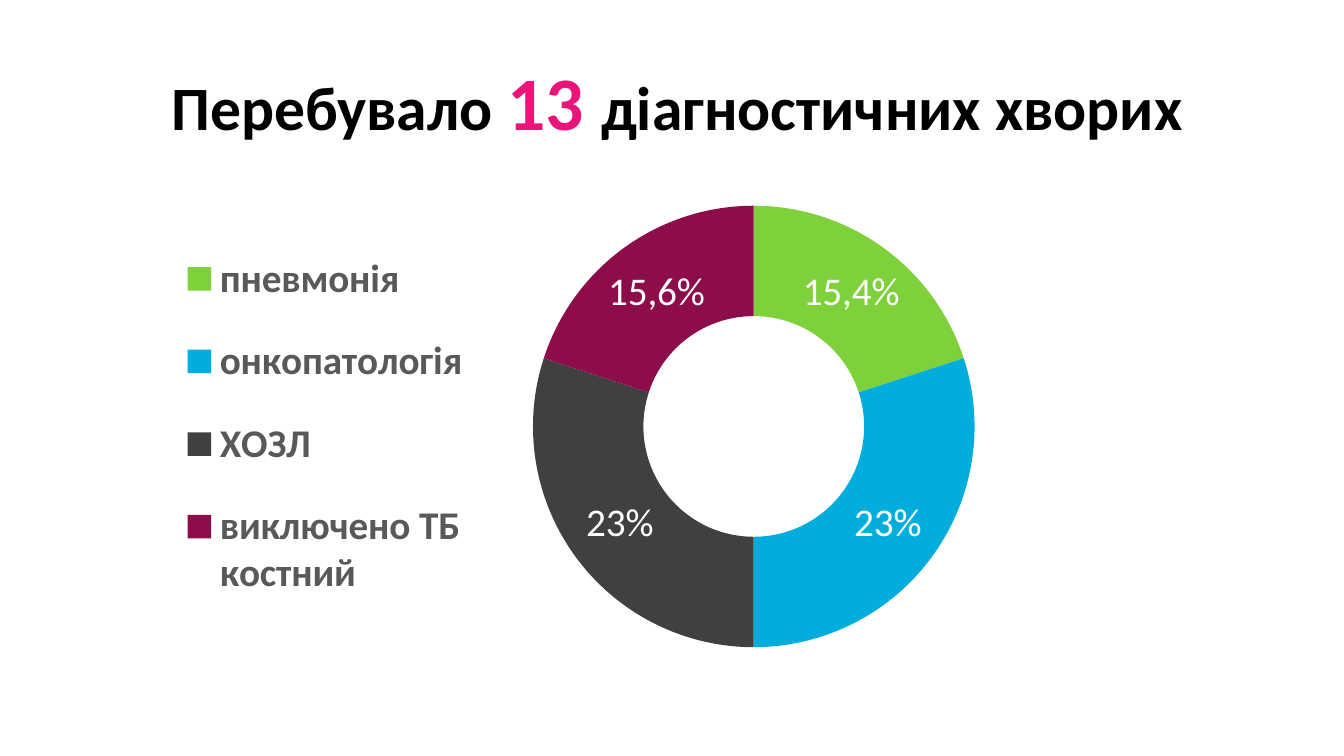
from dataclasses import dataclass

from pptx import Presentation
from pptx import util as u
from pptx.chart.data import CategoryChartData
from pptx.dml.color import RGBColor
from pptx.enum import chart as ch, text
from pptx.oxml import parse_xml
from pptx.oxml.ns import nsdecls, qn


@dataclass(frozen=True)
class Theme:
    font: str = "Calibri"
    ink: str = "000000"
    accent: str = "EA157A"
    legend_ink: str = "595959"
    label_ink: str = "FFFFFF"
    title_size: int = 44
    count_size: int = 54
    chart_size: int = 28


# Diagnosis, slice size, shown share, colour
DIAGNOSES = [
    ("пневмонія", 20, "15,4%", "7FD13B"),
    ("онкопатологія", 30, "23%", "00ADDC"),
    ("ХОЗЛ", 30, "23%", "404040"),
    ("виключено ТБ костний", 20, "15,6%", "8C0D49"),
]


def layout_xml(x, y, w, h, inner=False):
    target = '<c:layoutTarget val="inner"/>' if inner else ""
    return parse_xml(
        f'<c:layout {nsdecls("c")}><c:manualLayout>{target}'
        '<c:xMode val="edge"/><c:yMode val="edge"/>'
        f'<c:x val="{x}"/><c:y val="{y}"/><c:w val="{w}"/><c:h val="{h}"/>'
        "</c:manualLayout></c:layout>")


class SlideBuilder:
    def __init__(self, slide, theme):
        self.slide = slide
        self.theme = theme

    def style(self, font, size, color, bold):
        font.name = self.theme.font
        font.size = u.Pt(size)
        font.bold = bold
        font.color.rgb = RGBColor.from_string(color)

    def title(self, box, parts):
        frame = self.slide.shapes.add_textbox(*map(u.Inches, box)).text_frame
        frame.word_wrap = True
        frame.vertical_anchor = text.MSO_ANCHOR.MIDDLE
        heading = frame.paragraphs[0]
        heading.alignment = text.PP_ALIGN.CENTER
        for wording, size, color in parts:
            run = heading.add_run()
            run.text = wording
            self.style(run.font, size, color, True)

    def doughnut(self, box, rows, plot_area, legend_area):
        theme = self.theme
        names, sizes, shares, colors = zip(*rows)
        data = CategoryChartData()
        data.categories = names
        data.add_series("Series 1", sizes)
        chart = self.slide.shapes.add_chart(
            ch.XL_CHART_TYPE.DOUGHNUT, *map(u.Inches, box), data).chart
        chart.has_title = False
        self.style(chart.font, 10, theme.ink, False)

        # Slices with their shares
        plot = chart.plots[0]
        plot.vary_by_categories = True
        for i, (share, color) in enumerate(zip(shares, colors)):
            point = plot.series[0].points[i]
            point.format.fill.solid()
            point.format.fill.fore_color.rgb = RGBColor.from_string(color)
            point.format.line.fill.background()
            label = point.data_label.text_frame.paragraphs[0]
            run = label.add_run()
            run.text = share
            self.style(run.font, theme.chart_size, theme.label_ink, False)

        # Legend beside the ring
        chart.has_legend = True
        legend = chart.legend
        legend.position = ch.XL_LEGEND_POSITION.TOP
        legend.include_in_layout = False
        self.style(legend.font, theme.chart_size, theme.legend_ink, True)

        # Fixed places for ring and legend
        for parent in chart._chartSpace.iter(qn("c:plotArea"), qn("c:legend")):
            for old in parent.findall(qn("c:layout")):
                parent.remove(old)
            if parent.tag == qn("c:plotArea"):
                parent.insert(0, layout_xml(*plot_area, inner=True))
            else:
                parent.find(qn("c:legendPos")).addnext(layout_xml(*legend_area))


def main():
    deck = Presentation()
    deck.slide_width, deck.slide_height = u.Inches(13.33), u.Inches(7.5)
    theme = Theme()
    builder = SlideBuilder(deck.slides.add_slide(deck.slide_layouts[6]), theme)

    # Heading with the patient count
    builder.title((1.22, 0.39, 11, 1.2), [
        ("Перебувало ", theme.title_size, theme.ink),
        ("13 ", theme.count_size, theme.accent),
        ("діагностичних хворих", theme.title_size, theme.ink),
    ])

    # Share of each diagnosis
    builder.doughnut((1.51, 1.9, 11.05, 4.71), DIAGNOSES,
                     plot_area=(0.34, 0.03, 0.4, 0.93),
                     legend_area=(0.02, 0.06, 0.27, 0.87))
    deck.save("out.pptx")


if __name__ == "__main__":
    main()
